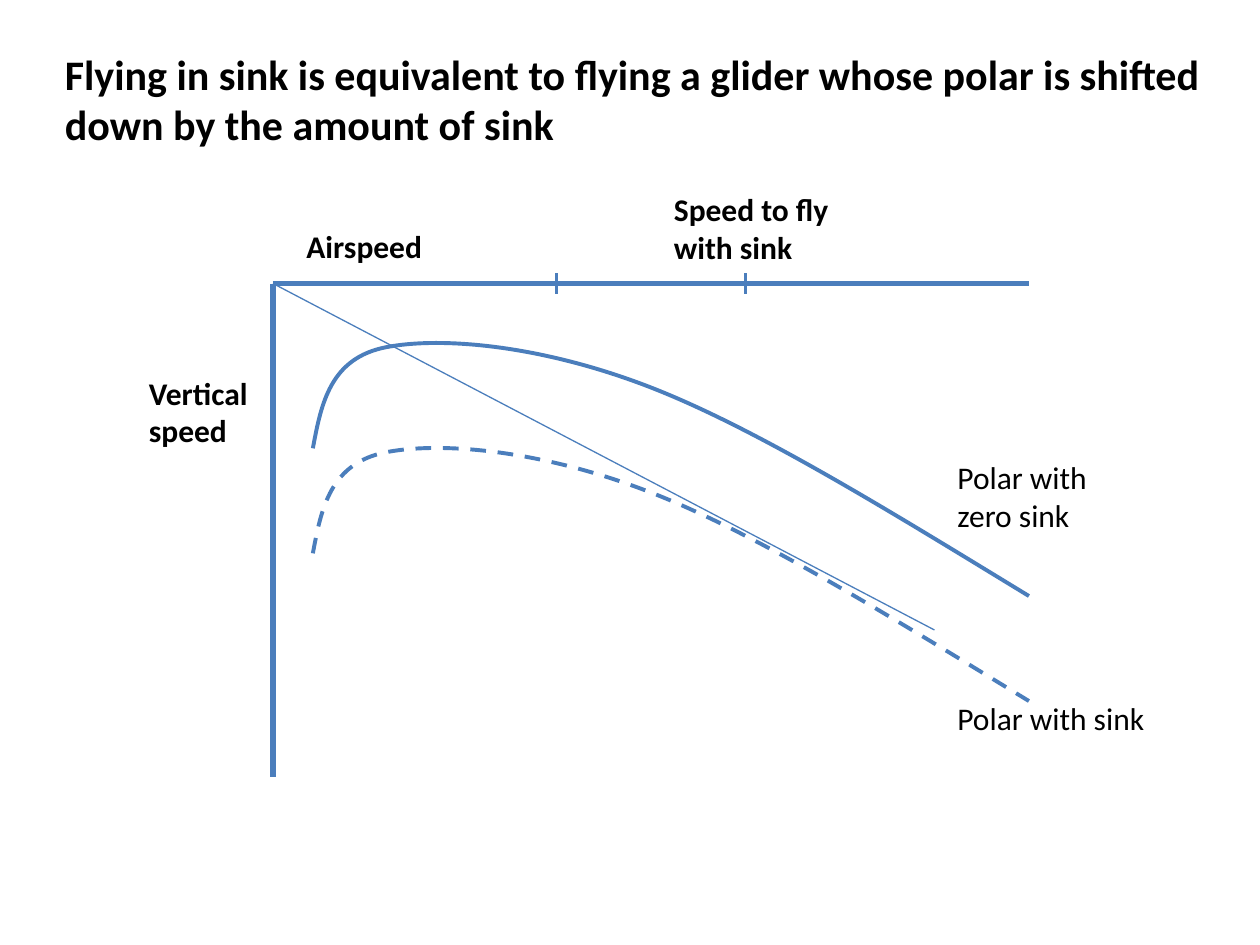
from lxml import etree
from pptx import Presentation
from pptx.dml.color import RGBColor
from pptx.enum.dml import MSO_LINE_DASH_STYLE as Dash
from pptx.enum.shapes import MSO_CONNECTOR as Connector
from pptx.enum.text import MSO_AUTO_SIZE as AutoSize
from pptx.oxml.ns import qn
from pptx.util import Pt

BLUE = RGBColor(0x4B, 0x7E, 0xBC)
BLACK = RGBColor(0, 0, 0)
FONT = "Calibri"

ORIGIN = (156, 162)
AXIS_RIGHT = 588
AXIS_BOTTOM = 444
TICKS = (426, 318)
TICK_HALF = 6
SINK = 60

POLAR_START = (178.8, 256.2)
POLAR_CURVES = [
    (183.6, 230.4), (188.8, 204.6), (220.8, 198.4),
    (252.8, 192.2), (309.6, 197.4), (370.8, 221),
    (432, 244.6), (509.8, 293), (588, 340.6),
]

LABELS = [
    ("Vertical speed", 78, 210, 72, 51, 18, True),
    ("Airspeed", 168, 126, 180, 29, 18, True),
    ("Flying in sink is equivalent to flying a glider whose polar is "
     "shifted down by the amount of sink", 30, 24, 702, 66, 24, True),
    ("Polar with zero sink", 540, 258, 120, 51, 18, False),
    ("Polar with sink", 540, 396, 144, 29, 18, False),
]
SPEED_LABEL = ("Speed to fly with sink", 378, 105, 126, 51, 18, True)


def add_line(shapes, start, end, width):
    sp = shapes.add_connector(Connector.STRAIGHT, *map(Pt, start + end))
    sp.line.color.rgb = BLUE
    sp.line.width = Pt(width)
    etree.SubElement(sp._element.spPr, qn("a:effectLst"))


def curve_segments(sp):
    segments = list(sp._element.iter(qn("a:lnTo")))
    for i in range(0, len(segments), 3):
        first, *others = segments[i:i + 3]
        first.tag = qn("a:cubicBezTo")
        for segment in others:
            first.append(segment[0])
            segment.getparent().remove(segment)


def add_polar(shapes, sink=0, dash=None):
    start, *controls = [
        (Pt(x), Pt(y + sink)) for x, y in [POLAR_START, *POLAR_CURVES]
    ]
    builder = shapes.build_freeform(*start, scale=1.0)
    builder.add_line_segments(controls, close=False)
    sp = builder.convert_to_shape()
    curve_segments(sp)
    sp.shadow.inherit = False
    sp.fill.background()
    sp.line.color.rgb = BLUE
    sp.line.width = Pt(2.25)
    if dash:
        sp.line.dash_style = dash


def add_label(shapes, text, left, top, width, height, size, bold):
    tf = shapes.add_textbox(*map(Pt, (left, top, width, height))).text_frame
    tf.word_wrap = True
    tf.auto_size = AutoSize.SHAPE_TO_FIT_TEXT
    tf.text = text
    font = tf.paragraphs[0].runs[0].font
    font.name = FONT
    font.size = Pt(size)
    font.bold = bold
    font.color.rgb = BLACK


def main():
    prs = Presentation()
    prs.slide_width, prs.slide_height = Pt(720), Pt(540)
    shapes = prs.slides.add_slide(prs.slide_layouts[6]).shapes

    x, y = ORIGIN
    axes = shapes.add_group_shape().shapes
    add_line(axes, (x, AXIS_BOTTOM), ORIGIN, 3)
    add_line(axes, ORIGIN, (AXIS_RIGHT, y), 3)
    add_polar(shapes)
    add_polar(shapes, SINK, Dash.DASH)
    for label in LABELS:
        add_label(shapes, *label)
    add_line(shapes, ORIGIN, (534, 360), 0.75)
    for tick in TICKS:
        add_line(shapes, (tick, y + TICK_HALF), (tick, y - TICK_HALF), 2.25)
    add_label(shapes, *SPEED_LABEL)

    prs.save("out.pptx")


if __name__ == "__main__":
    main()
